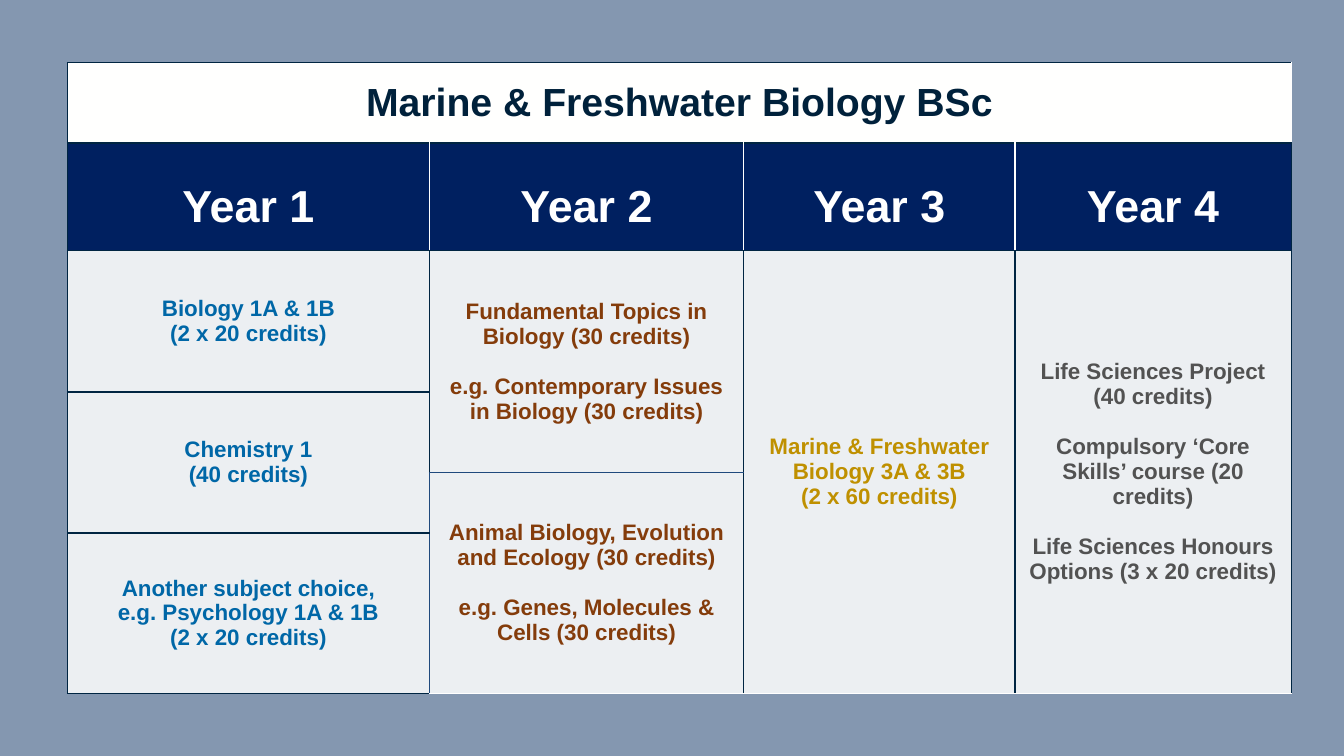
import pptx
import pptx.util
import pptx.dml.color
import pptx.enum.text
import pptx.oxml
import pptx.oxml.ns

Pt = pptx.util.Pt
HUES = {
    "back": "8497B0", "white": "FFFFFE", "text": "FFFFFF", "navy": "002060",
    "edge": "002542", "steel": "1F497D", "title": "00213B", "blue": "0067A7",
    "brown": "843C0B", "gold": "BF9000", "grey": "525252",
}
WIDTHS = (258.5, 224.6, 193.7, 197.3)
HEIGHTS = (57.6, 77, 100.8, 57.6, 43.2, 114.5)
BOX = (48.2, 44.6, sum(WIDTHS), sum(HEIGHTS))

# Each course: row, column, rows spanned, colour, edges, blocks of lines
COURSES = [
    (2, 0, 1, "blue", {}, [["Biology 1A & 1B", "(2 x 20 credits)"]]),
    (3, 0, 2, "blue", {"R": "steel"}, [["Chemistry 1", "(40 credits)"]]),
    (5, 0, 1, "blue", {"R": "steel"},
     [["Another subject choice,", "e.g. Psychology 1A & 1B", "(2 x 20 credits)"]]),
    (2, 1, 2, "brown", {"B": "steel"},
     [["Fundamental Topics in Biology (30 credits)"],
      ["e.g. Contemporary Issues in Biology (30 credits)"]]),
    (4, 1, 2, "brown", {"L": "steel", "T": "steel", "B": "steel"},
     [["Animal Biology, Evolution and Ecology (30 credits)"],
      ["e.g. Genes, Molecules & Cells (30 credits)"]]),
    (2, 2, 4, "gold", {},
     [["Marine & Freshwater Biology 3A & 3B", "(2 x 60 credits)"]]),
    (2, 3, 4, "grey", {},
     [["Life Sciences Project (40 credits)"],
      ["Compulsory ‘Core Skills’ course (20 credits)"],
      ["Life Sciences Honours Options (3 x 20 credits)"]]),
]


def rgb(name):
    return pptx.dml.color.RGBColor.from_string(HUES[name])


def rule(cell, side, hue):
    line = pptx.oxml.parse_xml(
        f'<a:ln{side} {pptx.oxml.ns.nsdecls("a")} w="{Pt(1)}"><a:solidFill>'
        f'<a:srgbClr val="{HUES[hue]}"/></a:solidFill></a:ln{side}>')
    props = cell._tc.get_or_add_tcPr()
    props.insert("LRTB".index(side), line)


def paint(cell, hue, alpha):
    cell.fill.solid()
    cell.fill.fore_color.rgb = rgb(hue)
    if alpha < 100:
        tint = cell._tc.tcPr.find(".//" + pptx.oxml.ns.qn("a:srgbClr"))
        tint.append(pptx.oxml.parse_xml(
            f'<a:alpha {pptx.oxml.ns.nsdecls("a")} val="{alpha * 1000}"/>'))


def write(cell, blocks, size, hue, space):
    cell.vertical_anchor = pptx.enum.text.MSO_ANCHOR.MIDDLE
    cell.margin_left = cell.margin_right = Pt(8.64)
    cell.margin_top = cell.margin_bottom = Pt(4.32)
    frame = cell.text_frame
    first = True
    for block in blocks:
        for num, words in enumerate(block):
            para = frame.paragraphs[0] if first else frame.add_paragraph()
            para.alignment = pptx.enum.text.PP_ALIGN.CENTER
            para.line_spacing = space
            if num == 0 and not first:
                para.space_before = Pt(18)
            run = para.add_run()
            run.text = words
            run.font.name = "Arial"
            run.font.size = Pt(size)
            run.font.bold = True
            run.font.color.rgb = rgb(hue)
            first = False


def place(table, row, col, blocks, size, hue, fill, down=1, wide=1,
          edges={}, alpha=100, space=1.0):
    end, last = row + down - 1, col + wide - 1
    cell = table.cell(row, col)
    if down * wide > 1:
        cell.merge(table.cell(end, last))
    write(cell, blocks, size, hue, space)
    for r in range(row, end + 1):
        for c in range(col, last + 1):
            part = table.cell(r, c)
            paint(part, fill, alpha)
            outer = {"L": c == col, "R": c == last, "T": r == row, "B": r == end}
            # Borders must come in the order L, R, T, B
            sides = [side for side in "LRTB" if outer[side]]
            for side in reversed(sides):
                line = edges.get(side, "edge")
                rule_at_front(part, side, line)


def rule_at_front(cell, side, hue):
    rule(cell, side, hue)
    props = cell._tc.tcPr
    props.insert(0, props.find(pptx.oxml.ns.qn("a:ln" + side)))


def banner(table):
    place(table, 0, 0, [["Marine & Freshwater Biology BSc"]], 28, "title",
          "white", wide=len(WIDTHS))


def heads(table):
    last = len(WIDTHS) - 1
    for col in range(last + 1):
        edges = {"L": "white" if col else "edge",
                 "R": "white" if col < last else "edge"}
        place(table, 1, col, [[f"Year {col + 1}"]], 32, "text", "navy",
              edges=edges, space=1.4)


def body(table):
    for row, col, down, hue, edges, blocks in COURSES:
        place(table, row, col, blocks, 16, hue, "white", down=down,
              edges=edges, alpha=85)


def grid(slide, box):
    shape = slide.shapes.add_table(len(HEIGHTS), len(WIDTHS), *map(Pt, box))
    table = shape.table
    table.first_row = table.horz_banding = False
    for col, width in zip(table.columns, WIDTHS):
        col.width = Pt(width)
    for row, height in zip(table.rows, HEIGHTS):
        row.height = Pt(height)
    banner(table)
    heads(table)
    body(table)


def main():
    deck = pptx.Presentation()
    deck.slide_width, deck.slide_height = Pt(960), Pt(540)
    slide = deck.slides.add_slide(deck.slide_layouts[6])
    # Background
    slide.background.fill.solid()
    slide.background.fill.fore_color.rgb = rgb("back")
    # Degree plan
    grid(slide, BOX)
    deck.save("out.pptx")


if __name__ == "__main__":
    main()
